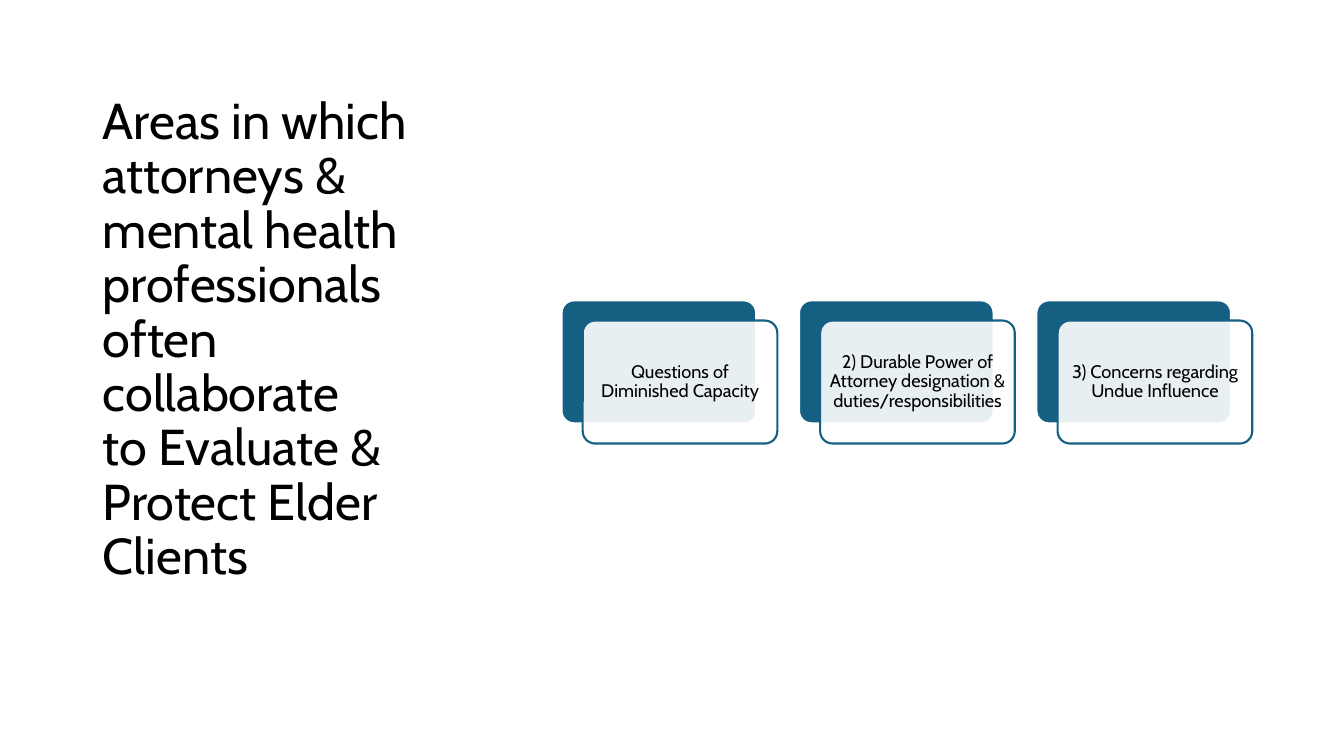
from lxml import etree
from pptx import Presentation
from pptx.dml.color import RGBColor
from pptx.enum.shapes import MSO_SHAPE
from pptx.enum.text import MSO_ANCHOR, MSO_AUTO_SIZE, PP_ALIGN
from pptx.oxml.ns import qn
from pptx.util import Inches, Pt

ROUNDED = MSO_SHAPE.ROUNDED_RECTANGLE
MIDDLE = MSO_ANCHOR.MIDDLE
LEFT, CENTER = PP_ALIGN.LEFT, PP_ALIGN.CENTER
NO_AUTOFIT = MSO_AUTO_SIZE.NONE

# Content
HEADING = [
    "Areas in which attorneys & mental health professionals often collaborate",
    "to Evaluate & Protect Elder Clients",
]
AREAS = [
    "Questions of Diminished Capacity",
    "2) Durable Power of Attorney designation & duties/responsibilities",
    "3) Concerns regarding Undue Influence",
]

# Style
FONT = "Cabin"
BLACK, WHITE, TEAL = "000000", "FFFFFF", "156082"
CARD_OPACITY = 90

# Layout in inches
SLIDE_W, SLIDE_H = 13.33, 7.5
HEADING_BOX = (0.92, 0.61, 3.69, 6.09)
HEADING_BOTTOM_INSET = 0.6
ROW_LEFT, ROW_TOP = 5.57, 2.98
CARD_W, CARD_H = 1.93, 1.22
COLUMN_STEP = 2.355
CARD_SHIFT_X, CARD_SHIFT_Y = 0.21, 0.2
CARD_INSET = 0.05


def color(hex_string):
    return RGBColor.from_string(hex_string)


def write(paragraph, lines, size, align):
    paragraph.alignment = align
    paragraph.line_spacing = 0.9
    for number, line in enumerate(lines):
        if number:
            paragraph.add_line_break()
        run = paragraph.add_run()
        run.text = line
        run.font.name = FONT
        run.font.size = Pt(size)
        run.font.color.rgb = color(BLACK)


def add_panel(slide, left, top, fill, outline):
    panel = slide.shapes.add_shape(
        ROUNDED, Inches(left), Inches(top), Inches(CARD_W), Inches(CARD_H))
    panel.adjustments[0] = 0.1
    panel.shadow.inherit = False
    panel.fill.solid()
    panel.fill.fore_color.rgb = color(fill)
    panel.line.color.rgb = color(outline)
    panel.line.width = Pt(1.5)
    return panel


def set_opacity(shape, percent):
    fill_color = shape.fill._xPr.find(qn("a:solidFill"))[0]
    etree.SubElement(fill_color, qn("a:alpha")).set("val", str(percent * 1000))


def add_heading(slide):
    heading = slide.shapes.title
    heading.left, heading.top, heading.width, heading.height = map(
        Inches, HEADING_BOX)
    frame = heading.text_frame
    frame.word_wrap = True
    frame.auto_size = NO_AUTOFIT
    frame.vertical_anchor = MIDDLE
    frame.margin_bottom = Inches(HEADING_BOTTOM_INSET)
    write(frame.paragraphs[0], HEADING, 36, LEFT)


def add_area(slide, column, area):
    left = ROW_LEFT + column * COLUMN_STEP
    add_panel(slide, left, ROW_TOP, TEAL, WHITE)
    card = add_panel(
        slide, left + CARD_SHIFT_X, ROW_TOP + CARD_SHIFT_Y, WHITE, TEAL)
    set_opacity(card, CARD_OPACITY)
    frame = card.text_frame
    frame.word_wrap = True
    frame.vertical_anchor = MIDDLE
    frame.margin_left = frame.margin_right = Inches(CARD_INSET)
    frame.margin_top = frame.margin_bottom = Inches(CARD_INSET)
    write(frame.paragraphs[0], [area], 13, CENTER)


def main():
    deck = Presentation()
    deck.slide_width, deck.slide_height = Inches(SLIDE_W), Inches(SLIDE_H)
    slide = deck.slides.add_slide(deck.slide_layouts[5])
    add_heading(slide)
    # One dark panel with a translucent card over it per area
    for column, area in enumerate(AREAS):
        add_area(slide, column, area)
    deck.save("out.pptx")


if __name__ == "__main__":
    main()
